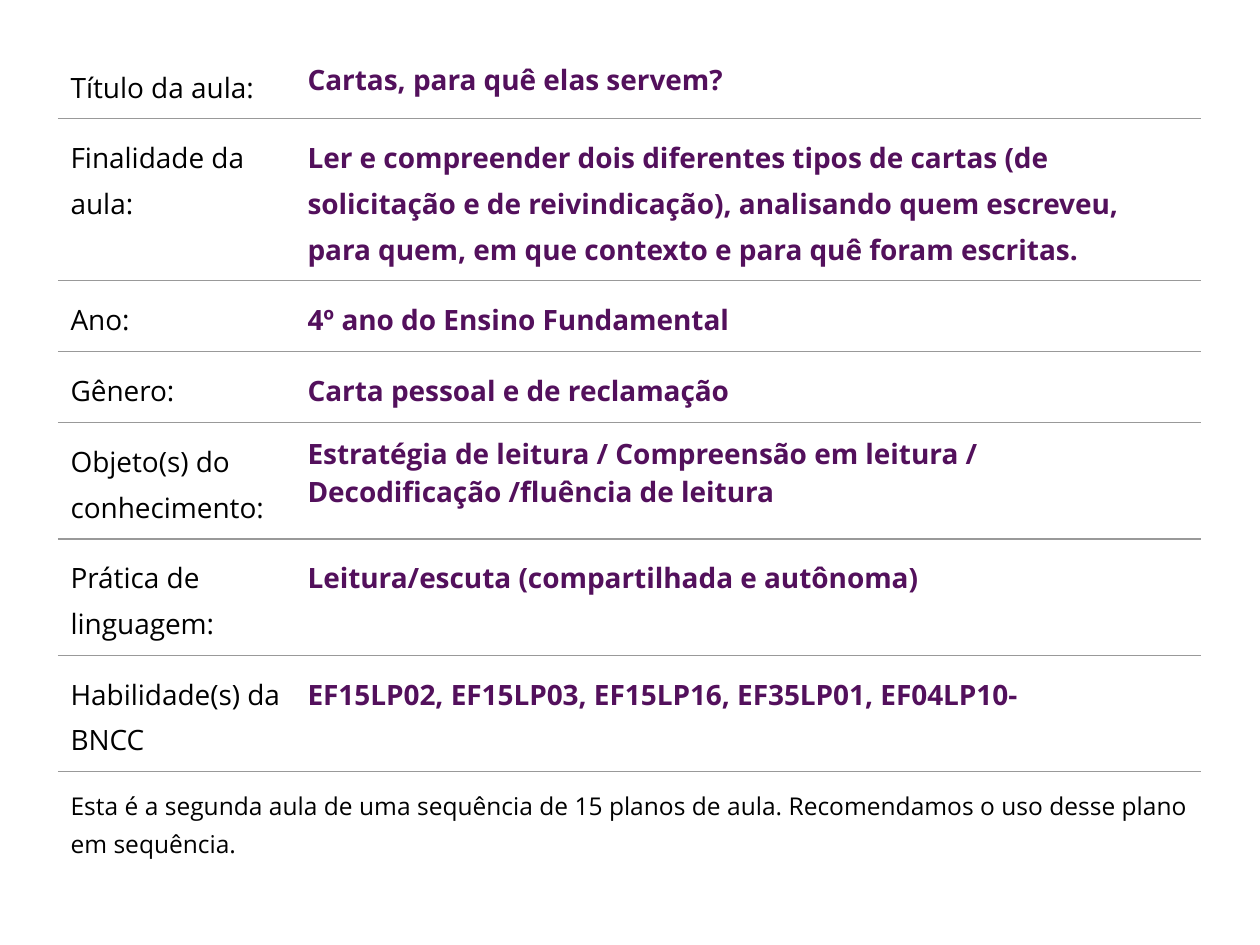
from lxml.etree import SubElement
from pptx import Presentation
from pptx.dml.color import RGBColor as RGB
from pptx.enum.text import MSO_ANCHOR as ANCHOR, PP_ALIGN as ALIGN
from pptx.oxml.ns import qn
from pptx.util import Pt

COLORS = {"label": "000000", "value": "53105C", "rule": "999999", "paper": "FFFFFF"}
COLUMNS = [237, 306, 276, 324]
ROWS = [
    ("Título da aula:", "Cartas, para quê elas servem?", 68, False),
    ("Finalidade da aula:",
     "Ler e compreender dois diferentes tipos de cartas (de solicitação e de "
     "reivindicação), analisando quem escreveu, para quem, em que contexto e "
     "para quê foram escritas.", 140, True),
    ("Ano:", "4º ano do Ensino Fundamental", 68, True),
    ("Gênero:", "Carta pessoal e de reclamação", 68, True),
    ("Objeto(s) do conhecimento:",
     "Estratégia de leitura / Compreensão em leitura / "
     "Decodificação /fluência de leitura", 105, False),
    ("Prática de linguagem:", "Leitura/escuta (compartilhada e autônoma)", 105, True),
    ("Habilidade(s) da BNCC",
     "EF15LP02, EF15LP03, EF15LP16, EF35LP01, EF04LP10-", 105, True),
]
NOTE = ("Esta é a segunda aula de uma sequência de 15 planos de aula. "
        "Recomendamos o uso desse plano em sequência.")
NOTE_HEIGHT = 83


def px(n):
    return round(n * 914400 / 126)


class Deck:
    font = "Open Sans"

    def __init__(self, width, height):
        self.prs = Presentation()
        self.prs.slide_width, self.prs.slide_height = px(width), px(height)
        self.slide = self.prs.slides.add_slide(self.prs.slide_layouts[6])

    def table(self, left, top, columns, heights):
        frame = self.slide.shapes.add_table(
            len(heights), len(columns), px(left), px(top),
            px(sum(columns)), px(sum(heights)))
        table = frame.table
        table.first_row = table.horz_banding = False
        for column, width in zip(table.columns, columns):
            column.width = px(width)
        for row, height in zip(table.rows, heights):
            row.height = px(height)
        return table

    def borders(self, cell, top, bottom):
        tcPr = cell._tc.get_or_add_tcPr()
        for side, color in zip("LRTB", (None, None, top, bottom)):
            ln = SubElement(tcPr, qn(f"a:ln{side}"), w=str(Pt(0.75)))
            if color:
                fill = SubElement(ln, qn("a:solidFill"))
                SubElement(fill, qn("a:srgbClr"), val=COLORS[color])
            else:
                SubElement(ln, qn("a:noFill"))
        cell.fill.background()

    def text(self, cell, text, color, size=16, bold=False, spacing=None, gap=None,
             align=ALIGN.LEFT):
        cell.margin_left = cell.margin_right = Pt(7.2)
        cell.margin_top = cell.margin_bottom = Pt(7.2)
        cell.vertical_anchor = ANCHOR.TOP
        p = cell.text_frame.paragraphs[0]
        p.text = text
        p.alignment, p.line_spacing = align, spacing
        if gap is not None:
            p.space_before = p.space_after = Pt(gap)
        p.font.name, p.font.size, p.font.bold = self.font, Pt(size), bold
        p.font.color.rgb = RGB.from_string(COLORS[color])


def main():
    deck = Deck(1260, 945)
    heights = [height for _, _, height, _ in ROWS] + [NOTE_HEIGHT]
    table = deck.table(58, 48, COLUMNS, heights)
    last = len(ROWS)

    for i in range(len(heights)):
        for j in range(len(COLUMNS)):
            deck.borders(table.cell(i, j), "rule" if i else None,
                         "rule" if i < last else "paper")

    for i, (label, value, _, spaced) in enumerate(ROWS):
        loose = {"spacing": 1.2, "gap": 3}
        table.cell(i, 1).merge(table.cell(i, 3))
        deck.text(table.cell(i, 0), label, "label", **loose)
        deck.text(table.cell(i, 1), value, "value", bold=True,
                  **(loose if spaced else {}))

    table.cell(last, 0).merge(table.cell(last, 3))
    deck.text(table.cell(last, 0), NOTE, "label", size=14, spacing=1.15,
              align=ALIGN.JUSTIFY)
    deck.prs.save("out.pptx")


if __name__ == "__main__":
    main()
